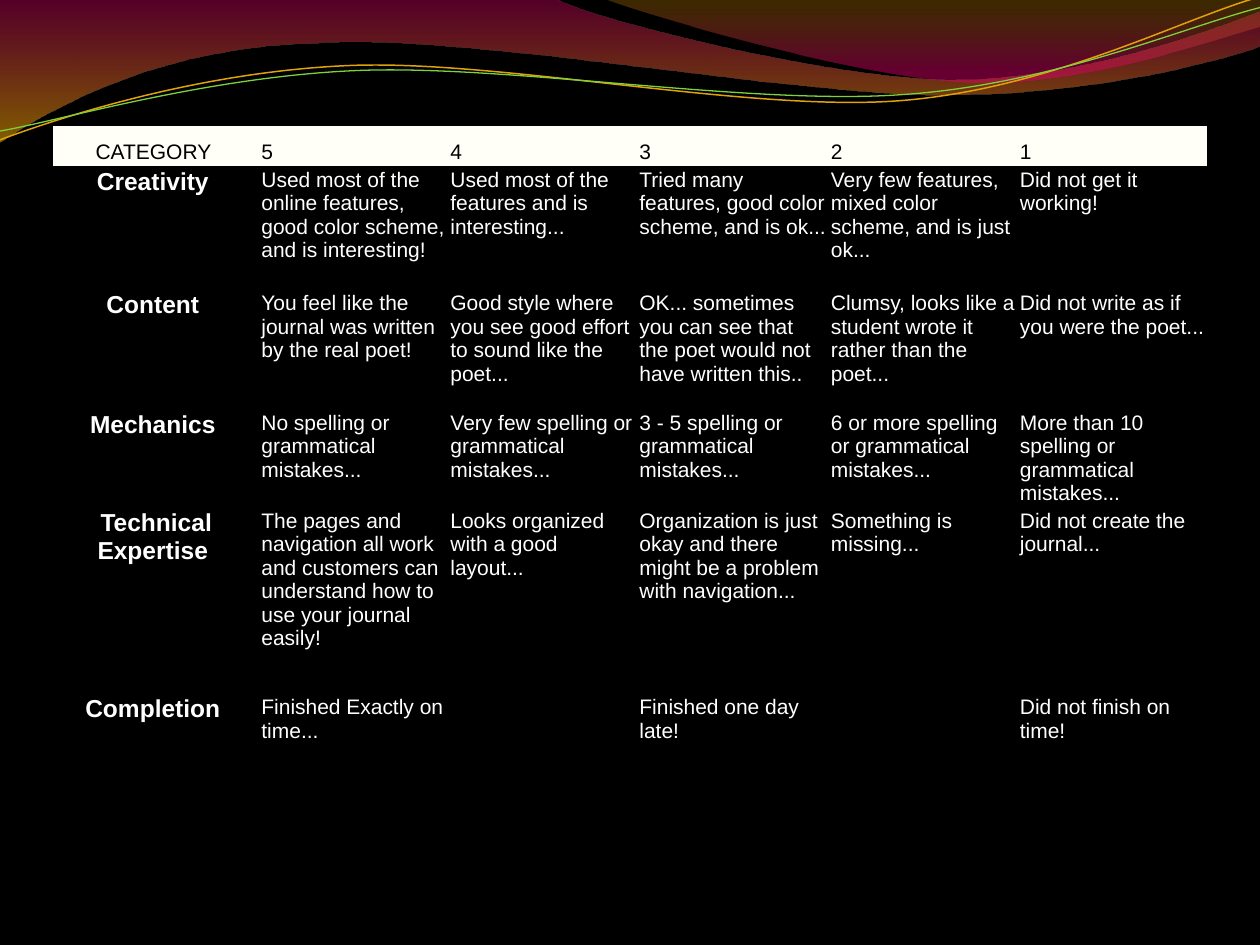
import math

import pptx
import pptx.dml.color
import pptx.enum.text
import pptx.oxml.ns
import pptx.util
from lxml import etree
from pptx.util import Inches

RGBColor = pptx.dml.color.RGBColor
BLACK = RGBColor(0x00, 0x00, 0x00)
WHITE = RGBColor(0xFF, 0xFF, 0xFF)
IVORY = RGBColor(0xFF, 0xFF, 0xF7)
MAGENTA = RGBColor(0xBD, 0x00, 0x59)
AMBER = RGBColor(0xF0, 0xAB, 0x00)
OCHRE = RGBColor(0xC3, 0x8B, 0x00)
CRIMSON = RGBColor(0xE1, 0x00, 0x6B)
GOLD = RGBColor(0xE0, 0xA2, 0x09)
GREEN = RGBColor(0x7F, 0xD1, 0x3B)

NO_GRID_STYLE = "{2D5ABB26-0587-4C30-8999-92F81FD0307C}"
CELL_MARGIN = pptx.util.Pt(1.1)
LINE_TILT = -2.7
LINE_CENTER = (4.99, 0.58)

# Each outline is a list of points (x, y) and cubic curves (x1, y1, x2, y2, x, y).
WIDE_WAVE = [
    (0, 0), (4.4, -0.01),
    (4.76, 0.17, 6.64, 0.63, 7.58, 0.63), (8.53, 0.63, 9.58, 0.26, 10, 0.09),
    (10.01, 0.36),
    (9.83, 0.44, 8.7, 0.76, 7.46, 0.75), (6.22, 0.75, 3.82, 0.28, 2.57, 0.34),
    (1.29, 0.36, 0.46, 0.83, -0.01, 1.13),
]
RIGHT_WAVE = [
    (4.79, -0.01),
    (5.09, 0.11, 6.82, 0.62, 7.69, 0.65), (8.56, 0.69, 9.61, 0.32, 10, 0.21),
    (10, 0),
]
GOLD_LINE = [
    (0, 1.11),
    (0.48, 0.93, 1.58, 0.57, 2.77, 0.52), (3.95, 0.47, 5.93, 0.89, 7.13, 0.8),
    (8.33, 0.71, 9.38, 0.15, 9.98, -0.02),
]
GREEN_LINE = [
    (0, 1.04),
    (0.47, 0.96, 1.64, 0.61, 2.83, 0.56), (4.03, 0.51, 5.97, 0.84, 7.17, 0.75),
    (8.36, 0.67, 9.41, 0.21, 10, 0.06),
]

COLUMN_WIDTHS = [1.64, 1.5, 1.5, 1.52, 1.5, 1.5]
ROW_HEIGHTS = [0.32, 0.98, 0.95, 0.63, 1.48, 1.48]
RUBRIC = [
    ["CATEGORY ", "5", "4", "3", "2", "1"],
    ["Creativity ",
     "Used most of the online features, good color scheme, and is interesting!",
     "Used most of the features and is interesting...",
     "Tried many features, good color scheme, and is ok...",
     "Very few features, mixed color scheme, and is just ok...",
     "Did not get it working!"],
    ["Content ",
     "You feel like the journal was written by the real poet!",
     "Good style where you see good effort to sound like the poet...",
     "OK... sometimes you can see that the poet would not have written this..",
     "Clumsy, looks like a student wrote it rather than the poet...",
     "Did not write as if you were the poet..."],
    ["Mechanics ",
     "No spelling or grammatical mistakes...",
     "Very few spelling or grammatical mistakes...",
     "3 - 5 spelling or grammatical mistakes...",
     "6 or more spelling or grammatical mistakes...",
     "More than 10 spelling or grammatical mistakes..."],
    ["Technical Expertise ",
     "The pages and navigation all work and customers can understand how to "
     "use your journal easily!",
     "Looks organized with a good layout...",
     "Organization is just okay and there might be a problem with navigation...",
     "Something is missing...",
     "Did not create the journal..."],
    ["Completion ", "Finished Exactly on time...", "", "Finished one day late!", "",
     "Did not finish on time!"],
]


def pairs(segment):
    return list(zip(segment[::2], segment[1::2]))


def add_outline(slide, outline, close):
    """Add a freeform through all points, then join each curve's three points."""
    segments = [[(Inches(x), Inches(y)) for x, y in pairs(part)] for part in outline]
    builder = slide.shapes.build_freeform(*segments[0][0])
    builder.add_line_segments(sum(segments[1:], []), close=close)
    shape = builder.convert_to_shape()
    shape.shadow.inherit = False
    lines = iter(shape.element.xpath(".//a:lnTo"))
    for segment in segments[1:]:
        steps = [next(lines) for _ in segment]
        if len(steps) == 3:
            curve = etree.Element(pptx.oxml.ns.qn("a:cubicBezTo"))
            steps[0].addprevious(curve)
            for step in steps:
                curve.append(step[0])
                step.getparent().remove(step)
    return shape


def add_wave(slide, outline, stops):
    """Add a filled band; stops are (position, colour, opacity percent), top to bottom."""
    wave = add_outline(slide, outline, close=True)
    wave.line.fill.background()
    wave.fill.gradient()
    wave.fill.gradient_angle = 270
    for stop, (position, color, _) in zip(wave.fill.gradient_stops, stops):
        stop.position = position
        stop.color.rgb = color
    colors = wave.element.xpath(".//a:gradFill//a:srgbClr")
    for element, (_, _, opacity) in zip(colors, stops):
        alpha = etree.SubElement(element, pptx.oxml.ns.qn("a:alpha"))
        alpha.set("val", str(opacity * 1000))


def untilt(segment):
    """Turn a segment's points back to where they lie before the shape's rotation."""
    angle = math.radians(-LINE_TILT)
    center_x, center_y = LINE_CENTER
    turned = []
    for x, y in pairs(segment):
        dx, dy = x - center_x, y - center_y
        turned += [center_x + dx * math.cos(angle) - dy * math.sin(angle),
                   center_y + dx * math.sin(angle) + dy * math.cos(angle)]
    return turned


def add_wavy_line(slide, outline, color, width):
    line = add_outline(slide, [untilt(part) for part in outline], close=False)
    line.rotation = LINE_TILT
    line.fill.background()
    line.line.color.rgb = color
    line.line.width = pptx.util.Pt(width)


def fill_cell(cell, text, is_header, is_label):
    cell.margin_left = cell.margin_right = CELL_MARGIN
    cell.margin_top = cell.margin_bottom = CELL_MARGIN
    if is_header:
        cell.fill.solid()
        cell.fill.fore_color.rgb = IVORY
        cell.vertical_anchor = pptx.enum.text.MSO_ANCHOR.BOTTOM
    else:
        cell.fill.background()
    if not text:
        return
    cell.text = text
    paragraph = cell.text_frame.paragraphs[0]
    if is_label:
        paragraph.alignment = pptx.enum.text.PP_ALIGN.CENTER
    is_criterion = is_label and not is_header
    font = paragraph.font
    font.name = "Arial"
    font.size = pptx.util.Pt(14 if is_criterion else 12)
    font.bold = is_criterion
    font.color.rgb = BLACK if is_header else WHITE


def add_rubric(slide):
    frame = slide.shapes.add_table(
        len(ROW_HEIGHTS), len(COLUMN_WIDTHS), Inches(0.42), Inches(1),
        Inches(sum(COLUMN_WIDTHS)), Inches(sum(ROW_HEIGHTS)))
    table = frame.table
    table.first_row = table.horz_banding = False
    frame.element.xpath(".//a:tableStyleId")[0].text = NO_GRID_STYLE
    for column, width in zip(table.columns, COLUMN_WIDTHS):
        column.width = Inches(width)
    for row, height in zip(table.rows, ROW_HEIGHTS):
        row.height = Inches(height)
    for r, texts in enumerate(RUBRIC):
        for c, text in enumerate(texts):
            fill_cell(table.cell(r, c), text, is_header=r == 0, is_label=c == 0)


def main():
    deck = pptx.Presentation()
    deck.slide_width, deck.slide_height = Inches(10), Inches(7.5)
    slide = deck.slides.add_slide(deck.slide_layouts[6])
    slide.background.fill.solid()
    slide.background.fill.fore_color.rgb = BLACK
    add_wave(slide, WIDE_WAVE, [(0, MAGENTA, 45), (1, AMBER, 55)])
    add_wave(slide, RIGHT_WAVE, [(0, OCHRE, 30), (0.8, CRIMSON, 45)])
    add_wavy_line(slide, GOLD_LINE, GOLD, 0.85)
    add_wavy_line(slide, GREEN_LINE, GREEN, 0.75)
    add_rubric(slide)
    deck.save("out.pptx")


if __name__ == "__main__":
    main()
